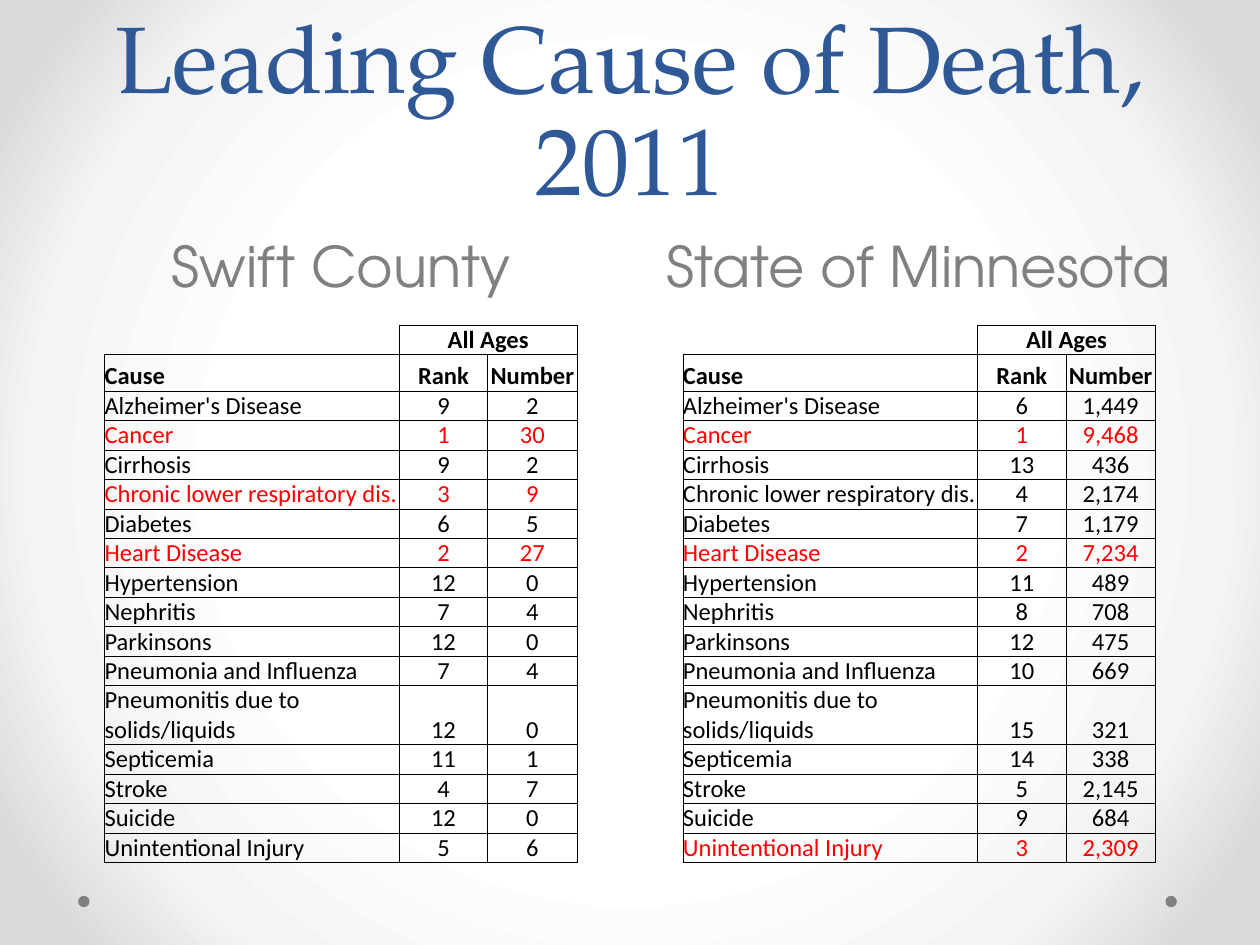
from dataclasses import dataclass

from lxml.etree import SubElement
from pptx import Presentation
from pptx.dml.color import RGBColor
from pptx.enum.shapes import MSO_SHAPE
from pptx.enum.text import MSO_ANCHOR, PP_ALIGN
from pptx.oxml import parse_xml
from pptx.oxml.ns import nsdecls, qn
from pptx.util import Inches, Pt


@dataclass(frozen=True)
class Theme:
    title_font: str = "TeX Gyre Pagella"
    heading_font: str = "TeX Gyre Adventor"
    table_font: str = "Calibri"
    title_size: int = 54
    heading_size: int = 32
    table_size: int = 14
    title_spacing: int = 58
    border_width: float = 0.5
    blue: str = "2F5897"
    gray: str = "808080"
    black: str = "000000"
    red: str = "FF0000"
    backdrop: tuple = ((50, "FFFFFF"), (76, "F4F4F4"), (92, "DADADA"))


def write_text(text_frame, text, *, font, size, color, bold=False,
               align=PP_ALIGN.CENTER, line_spacing=None):
    paragraph = text_frame.paragraphs[0]
    paragraph.alignment = align
    if line_spacing:
        paragraph.line_spacing = Pt(line_spacing)
    run = paragraph.add_run()
    run.text = text
    run.font.name = font
    run.font.size = Pt(size)
    run.font.bold = bold
    run.font.color.rgb = RGBColor.from_string(color)


class SlideBuilder:
    def __init__(self, slide, theme):
        self.slide = slide
        self.theme = theme

    def background(self):
        fill = self.slide.background.fill
        fill.gradient()
        stops = "".join(
            f'<a:gs pos="{position * 1000}"><a:srgbClr val="{color}"/></a:gs>'
            for position, color in self.theme.backdrop)
        radial = parse_xml(
            f'<a:gradFill {nsdecls("a")} rotWithShape="1"><a:gsLst>{stops}</a:gsLst>'
            '<a:path path="circle"><a:fillToRect l="50000" t="50000" r="50000" b="50000"/>'
            '</a:path></a:gradFill>')
        gradient = self.slide.background._cSld.find(".//" + qn("a:gradFill"))
        gradient.getparent().replace(gradient, radial)

    def dot(self, left, top, size=0.09):
        shape = self.slide.shapes.add_shape(
            MSO_SHAPE.OVAL, Inches(left), Inches(top), Inches(size), Inches(size))
        shape.shadow.inherit = False
        shape.fill.solid()
        shape.fill.fore_color.rgb = RGBColor.from_string(self.theme.gray)
        shape.line.fill.background()

    def text(self, text, left, top, width, height, **text_format):
        shape = self.slide.shapes.add_textbox(
            Inches(left), Inches(top), Inches(width), Inches(height))
        shape.text_frame.word_wrap = True
        shape.text_frame.vertical_anchor = MSO_ANCHOR.BOTTOM
        write_text(shape.text_frame, text, **text_format)

    def borders(self, cell, visible):
        properties = cell._tc.get_or_add_tcPr()
        for index, side in enumerate("LRTB"):
            paint = (f'<a:solidFill><a:srgbClr val="{self.theme.black}"/></a:solidFill>'
                     if side in visible else "<a:noFill/>")
            properties.insert(index, parse_xml(
                f'<a:ln{side} {nsdecls("a")} w="{Pt(self.theme.border_width)}">'
                f"{paint}</a:ln{side}>"))

    def cell(self, cell, text, visible="LRTB", **text_format):
        cell.margin_left = cell.margin_right = cell.margin_top = cell.margin_bottom = 0
        cell.vertical_anchor = MSO_ANCHOR.BOTTOM
        cell.fill.background()
        self.borders(cell, visible)
        if text:
            write_text(cell.text_frame, text, font=self.theme.table_font,
                       size=self.theme.table_size, **text_format)
        else:  # keeps an empty cell as low as its row
            SubElement(cell.text_frame.paragraphs[0]._p, qn("a:endParaRPr"),
                       sz=str(self.theme.table_size * 100))

    def table(self, left, top, column_widths, rows, highlighted):
        heights = [HEADER_HEIGHT if row[0] == "Cause"
                   else 2 * ROW_HEIGHT if row[0] in TWO_LINE_CAUSES
                   else ROW_HEIGHT for row in rows]
        frame = self.slide.shapes.add_table(
            len(rows), len(column_widths), Inches(left), Inches(top),
            Inches(sum(column_widths)), Inches(sum(heights)))
        table = frame.table
        table.first_row = table.horz_banding = False
        for column, width in zip(table.columns, column_widths):
            column.width = Inches(width)
        for table_row, height in zip(table.rows, heights):
            table_row.height = Inches(height)
        table.cell(0, 1).merge(table.cell(0, 2))
        for row_index, row in enumerate(rows):
            for column_index, value in enumerate(row):
                corner = row_index == column_index == 0
                self.cell(
                    table.cell(row_index, column_index), value,
                    visible="RB" if corner else "LRTB",
                    color=self.theme.red if row[0] in highlighted else self.theme.black,
                    bold=row_index < 2,
                    align=PP_ALIGN.CENTER if column_index else PP_ALIGN.LEFT)


ROW_HEIGHT = 0.22
HEADER_HEIGHT = 0.29
COLUMN_WIDTHS = (2.34, 0.7, 0.71)
TWO_LINE_CAUSES = {"Pneumonitis due to solids/liquids"}
HEADER_ROWS = [("", "All Ages", ""), ("Cause", "Rank", "Number")]

# Cause, then rank and number for the county and for the state
DEATHS = [
    ("Alzheimer's Disease", "9", "2", "6", "1,449"),
    ("Cancer", "1", "30", "1", "9,468"),
    ("Cirrhosis", "9", "2", "13", "436"),
    ("Chronic lower respiratory dis.", "3", "9", "4", "2,174"),
    ("Diabetes", "6", "5", "7", "1,179"),
    ("Heart Disease", "2", "27", "2", "7,234"),
    ("Hypertension", "12", "0", "11", "489"),
    ("Nephritis", "7", "4", "8", "708"),
    ("Parkinsons", "12", "0", "12", "475"),
    ("Pneumonia and Influenza", "7", "4", "10", "669"),
    ("Pneumonitis due to solids/liquids", "12", "0", "15", "321"),
    ("Septicemia", "11", "1", "14", "338"),
    ("Stroke", "4", "7", "5", "2,145"),
    ("Suicide", "12", "0", "9", "684"),
    ("Unintentional Injury", "5", "6", "3", "2,309"),
]

# Heading, heading left, table left, first data column
REGIONS = [
    ("Swift County", 0.5, 0.83, 1),
    ("State of Minnesota", 5.08, 5.42, 3),
]


def main():
    presentation = Presentation()
    presentation.slide_width = Inches(10)
    presentation.slide_height = Inches(7.5)
    theme = Theme()
    slide = presentation.slides.add_slide(presentation.slide_layouts[6])
    builder = SlideBuilder(slide, theme)

    # Backdrop and corner dots
    builder.background()
    for left in (9.25, 0.62):
        builder.dot(left, 7.11)

    # Title
    builder.text("Leading Cause of Death, 2011", 0.5, 0, 9, 1.75,
                 font=theme.title_font, size=theme.title_size, color=theme.blue,
                 line_spacing=theme.title_spacing)

    # One heading and table per region, with the top three causes in red
    for heading, heading_left, table_left, first in REGIONS:
        builder.text(heading, heading_left, 1.75, 4.42, 0.67, font=theme.heading_font,
                     size=theme.heading_size, color=theme.gray)
        rows = [(death[0], *death[first:first + 2]) for death in DEATHS]
        top_three = {cause for cause, rank, _ in rows if int(rank) <= 3}
        builder.table(table_left, 2.58, COLUMN_WIDTHS, HEADER_ROWS + rows, top_three)

    presentation.save("out.pptx")


if __name__ == "__main__":
    main()
